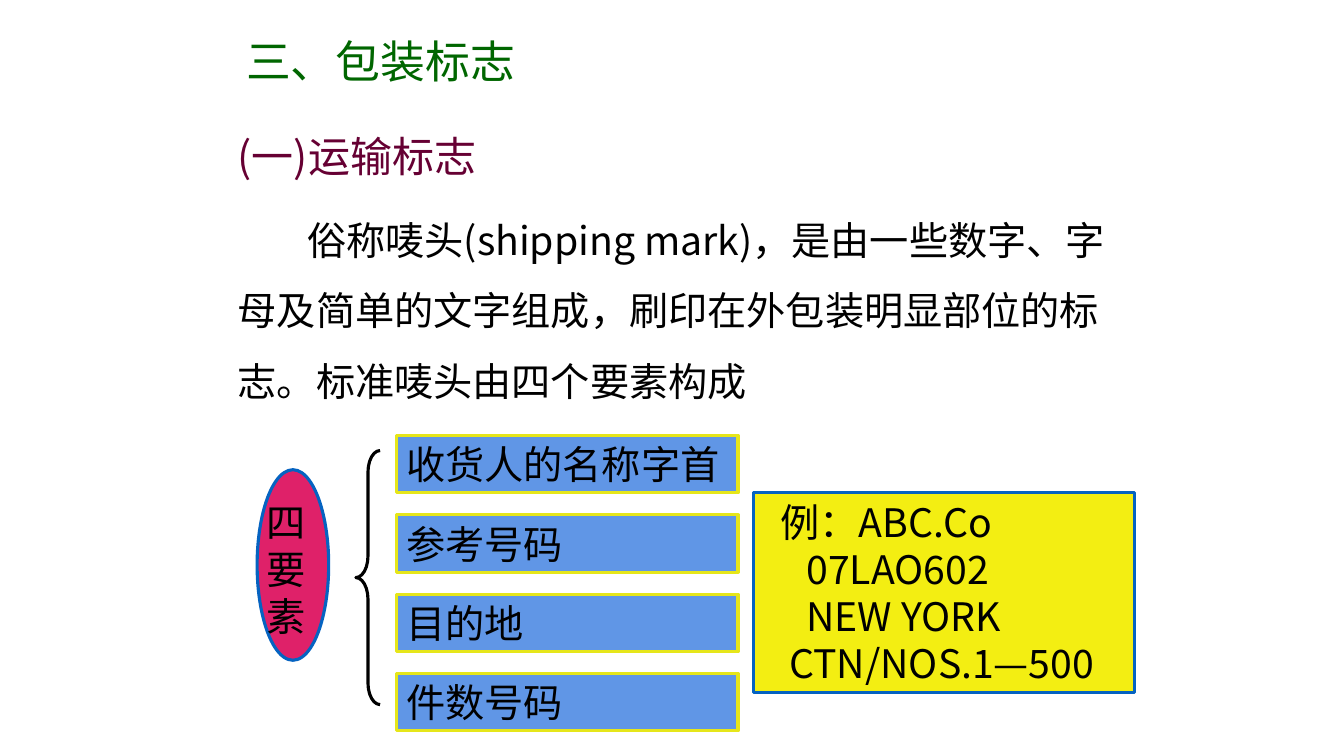
from lxml import etree
from pptx import Presentation
from pptx.dml.color import RGBColor
from pptx.enum.shapes import MSO_SHAPE
from pptx.enum.text import MSO_ANCHOR, PP_ALIGN
from pptx.oxml.ns import qn
from pptx.util import Inches, Pt

RECT, OVAL, BRACE = MSO_SHAPE.RECTANGLE, MSO_SHAPE.OVAL, MSO_SHAPE.LEFT_BRACE
TOP, MIDDLE, LEFT = MSO_ANCHOR.TOP, MSO_ANCHOR.MIDDLE, PP_ALIGN.LEFT
CJK = "Noto Sans CJK SC"
BLACK, BLUE = "000000", "0563C1"


def set_text(sp, lines, size=28, color=BLACK, font="Arial", anchor=TOP):
    """Fill a shape with paragraphs, each a list of (text, font) runs or a string."""
    tf = sp.text_frame
    tf.word_wrap = True
    tf.vertical_anchor = anchor
    for i, line in enumerate(lines):
        p = tf.add_paragraph() if i else tf.paragraphs[0]
        p.alignment = LEFT
        for text, face in [(line, font)] if isinstance(line, str) else line:
            r = p.add_run()
            r.text = text
            r.font.size = Pt(size)
            r.font.name = face
            r.font.color.rgb = RGBColor.from_string(color)
            ea = etree.SubElement(r.font._element, qn("a:ea"))
            ea.set("typeface", CJK)
    return tf


def add_shape(kind, x, y, w, h, line, fill=None):
    sp = s.shapes.add_shape(kind, Inches(x), Inches(y), Inches(w), Inches(h))
    sp.shadow.inherit = False
    sp.line.color.rgb = RGBColor.from_string(line)
    sp.line.width = Pt(2.25)
    if fill:
        sp.fill.solid()
        sp.fill.fore_color.rgb = RGBColor.from_string(fill)
    else:
        sp.fill.background()
    return sp


prs = Presentation()
prs.slide_width, prs.slide_height = Inches(13.33), Inches(7.5)
s = prs.slides.add_slide(prs.slide_layouts[5])

# Headings
title = s.shapes.title
title.left, title.top = Inches(2.34), Inches(0.28)
title.width, title.height = Inches(8.82), Inches(0.64)
set_text(title, ["三、包装标志"], 32, "006600", CJK)

subtitle = s.shapes.add_textbox(Inches(2.26), Inches(1.25), Inches(8.74), Inches(0.6))
set_text(subtitle, ["(一)运输标志"], 30, "660033", CJK)

# Definition
body = s.shapes.add_textbox(Inches(2.26), Inches(1.86), Inches(8.9), Inches(2.22))
tf = set_text(body, [[
    ("俗称唛头", "Arial"),
    ("(shipping mark)", CJK),
    ("，是由一些数字、字母及简单的文字组成，刷印在外包装明显部位的标志。标准唛头由四个要素构成", "Arial"),
]])
p = tf.paragraphs[0]
p.line_spacing = 1.5
p._p.get_or_add_pPr().set("indent", str(Inches(0.69)))

# Four elements
add_shape(OVAL, 2.55, 4.66, 0.71, 1.89, BLUE, "DF2169")
label = s.shapes.add_textbox(Inches(2.55), Inches(4.89), Inches(0.63), Inches(1.51))
set_text(label, ["四要素"])

brace = add_shape(BRACE, 3.53, 4.47, 0.24, 2.52, BLACK)
brace.adjustments[0] = 0.89

for i, element in enumerate(["收货人的名称字首", "参考号码", "目的地", "件数号码"]):
    box = add_shape(RECT, 3.93, 4.32 + 0.787 * i, 3.39, 0.57, "E6E61A", "6096E6")
    set_text(box, [element], anchor=MIDDLE)

# Example mark
example = add_shape(RECT, 7.47, 4.89, 3.78, 1.98, BLUE, "F3EE12")
tf = set_text(example, ["例：ABC.Co", "07LAO602", "NEW YORK", "CTN/NOS.1—500"], font=CJK)
for p, indent in zip(tf.paragraphs, [0.17, 0.43, 0.43, 0.26]):
    p._p.get_or_add_pPr().set("marL", str(Inches(indent)))

prs.save("out.pptx")
